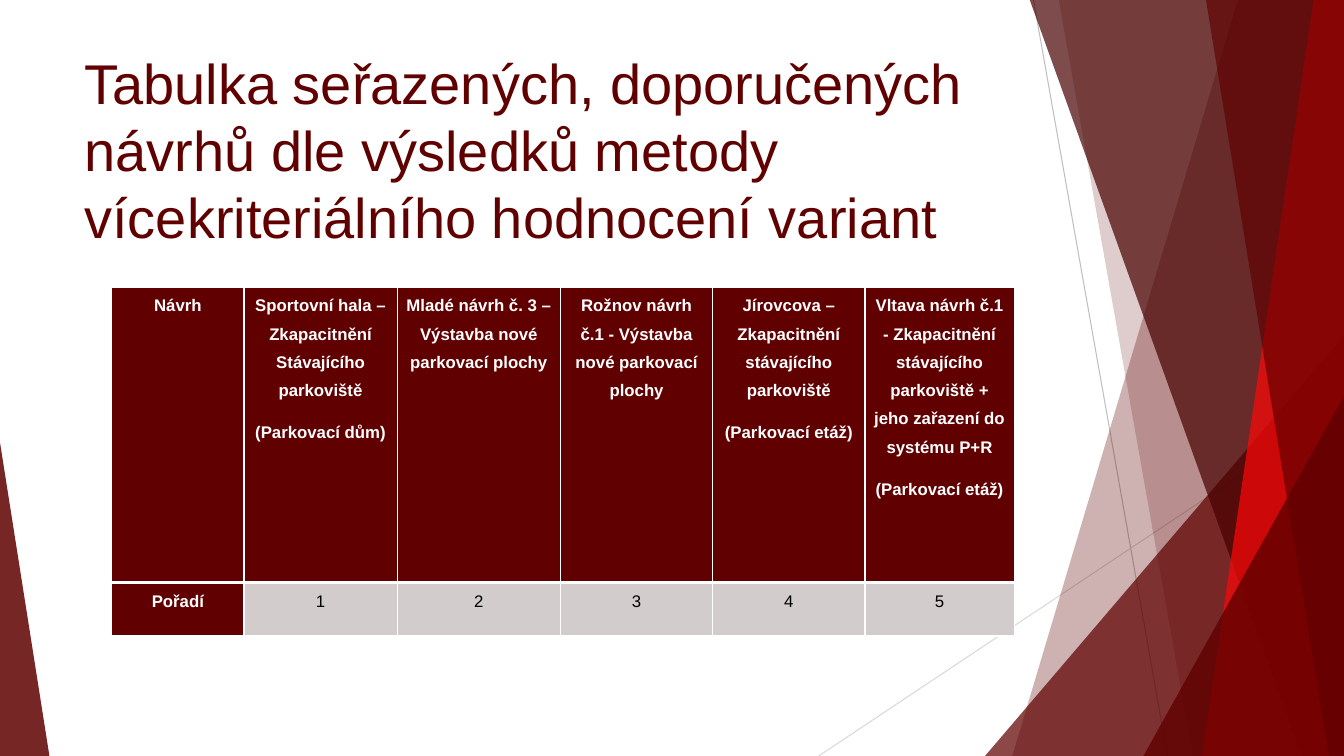
from lxml import etree
from pptx import Presentation
from pptx.dml.color import RGBColor
from pptx.enum.shapes import MSO_CONNECTOR, MSO_SHAPE
from pptx.enum.text import MSO_ANCHOR, PP_ALIGN
from pptx.oxml.ns import qn
from pptx.util import Inches, Pt

# Content
TITLE = ("Tabulka seřazených, doporučených návrhů dle výsledků metody "
         "vícekriteriálního hodnocení variant")
ROWS = [
    ["Návrh",
     "Sportovní hala – Zkapacitnění Stávajícího parkoviště\n(Parkovací dům)",
     "Mladé návrh č. 3 – Výstavba nové parkovací plochy",
     "Rožnov návrh č.1 - Výstavba nové parkovací plochy",
     "Jírovcova – Zkapacitnění stávajícího parkoviště\n(Parkovací etáž)",
     "Vltava návrh č.1 - Zkapacitnění stávajícího parkoviště + "
     "jeho zařazení do systému P+R\n(Parkovací etáž)"],
    ["Pořadí", "1", "2", "3", "4", "5"],
]
COL_WIDTHS = [1.31, 1.52, 1.62, 1.51, 1.51, 1.48]
ROW_HEIGHTS = [2.93, 0.53]
TABLE_LEFT, TABLE_TOP = 1.11, 2.85

FONT, MAROON, WHITE, BLACK, GREY = "Arial", "600000", "FFFFFF", "000000", "D2CCCC"
WIDTH, HEIGHT, BAND_TOP = 13.33, 7.5, -0.01

# Decoration, back to front
LINES = [(10.25, 0, 11.58, HEIGHT, "BFBFBF"),
         (WIDTH, 4.03, 8.12, HEIGHT, "D9D9D9")]
# band: top-left x, bottom-left x; triangle: left, top, width, apex position
DECOR = [
    ("band", (12.28, 10.04), MAROON, 30),
    ("band", (10.5, 11.83), MAROON, 20),
    ("triangle", (9.77, 3.33, 3.56, 1), MAROON, 72),
    ("band", (10.21, 12.91), "480000", 70),
    ("band", (13.03, 11.92), "FF0707", 70),
    ("band", (11.96, 13.18), MAROON, 65),
    ("triangle", (11.34, 3.93, 1.99, 1), MAROON, 80),
    ("triangle", (0, 4.39, 0.49, 0), MAROON, 85),
]


def paint(target, color):
    target.solid()
    target.fore_color.rgb = RGBColor.from_string(color)


def style(p, size, color, bold=False):
    for r in p.runs:
        r.font.name, r.font.size, r.font.bold = FONT, Pt(size), bold
        paint(r.font.fill, color)


def add_line(s, x1, y1, x2, y2, color):
    line = s.shapes.add_connector(MSO_CONNECTOR.STRAIGHT,
                                  *map(Inches, (x1, y1, x2, y2)))
    line.line.width = Pt(0.75)
    paint(line.line.fill, color)
    etree.SubElement(line._element.spPr, qn("a:effectLst"))


def add_band(s, top_x, bottom_x):
    corners = [(top_x, BAND_TOP), (WIDTH, BAND_TOP), (WIDTH, HEIGHT), (bottom_x, HEIGHT)]
    points = [(Inches(x), Inches(y)) for x, y in corners]
    builder = s.shapes.build_freeform(*points[0])
    builder.add_line_segments(points[1:], close=True)
    return builder.convert_to_shape()


def add_triangle(s, left, top, width, apex):
    sp = s.shapes.add_shape(MSO_SHAPE.ISOSCELES_TRIANGLE,
                            *map(Inches, (left, top, width, HEIGHT - top)))
    sp.adjustments[0] = apex
    return sp


def finish(sp, color, opacity):
    sp.shadow.inherit = False
    sp.line.fill.background()
    paint(sp.fill, color)
    clr = sp._element.spPr.find(qn("a:solidFill"))[0]
    etree.SubElement(clr, qn("a:alpha"), val=str(opacity * 1000))


def set_borders(cell, **widths):
    tcPr = cell._tc.get_or_add_tcPr()
    for i, side in enumerate(("lnL", "lnR", "lnT", "lnB")):
        ln = etree.Element(qn("a:" + side), w=str(Pt(widths.get(side, 1))))
        fill = etree.SubElement(ln, qn("a:solidFill"))
        etree.SubElement(fill, qn("a:srgbClr"), val=WHITE)
        tcPr.insert(i, ln)


prs = Presentation()
prs.slide_width, prs.slide_height = Inches(WIDTH), Inches(HEIGHT)
s = prs.slides.add_slide(prs.slide_layouts[6])
paint(s.background.fill, WHITE)

for line in LINES:
    add_line(s, *line)
for kind, geometry, color, opacity in DECOR:
    build = add_band if kind == "band" else add_triangle
    finish(build(s, *geometry), color, opacity)

# Title
tf = s.shapes.add_textbox(*map(Inches, (0.74, 0.43, 9.4, 1.44))).text_frame
tf.word_wrap = True
tf.vertical_anchor = MSO_ANCHOR.TOP
tf.text = TITLE
style(tf.paragraphs[0], 40, MAROON)

# Table of ranked proposals
table = s.shapes.add_table(
    len(ROWS), len(COL_WIDTHS),
    *map(Inches, (TABLE_LEFT, TABLE_TOP, sum(COL_WIDTHS), sum(ROW_HEIGHTS)))).table
for col, width in zip(table.columns, COL_WIDTHS):
    col.width = Inches(width)
for row, height in zip(table.rows, ROW_HEIGHTS):
    row.height = Inches(height)
for i, texts in enumerate(ROWS):
    for j, text in enumerate(texts):
        cell = table.cell(i, j)
        header = i == 0 or j == 0
        cell.margin_left = cell.margin_right = Inches(0.07)
        cell.margin_top = cell.margin_bottom = 0
        paint(cell.fill, MAROON if header else GREY)
        set_borders(cell, **{"lnB" if i == 0 else "lnT": 3})
        cell.text_frame.text = text
        for p in cell.text_frame.paragraphs:
            p.alignment = PP_ALIGN.CENTER
            p.line_spacing, p.space_after = 1.5, Pt(10)
            style(p, 12, WHITE if header else BLACK, header)

prs.save("out.pptx")
